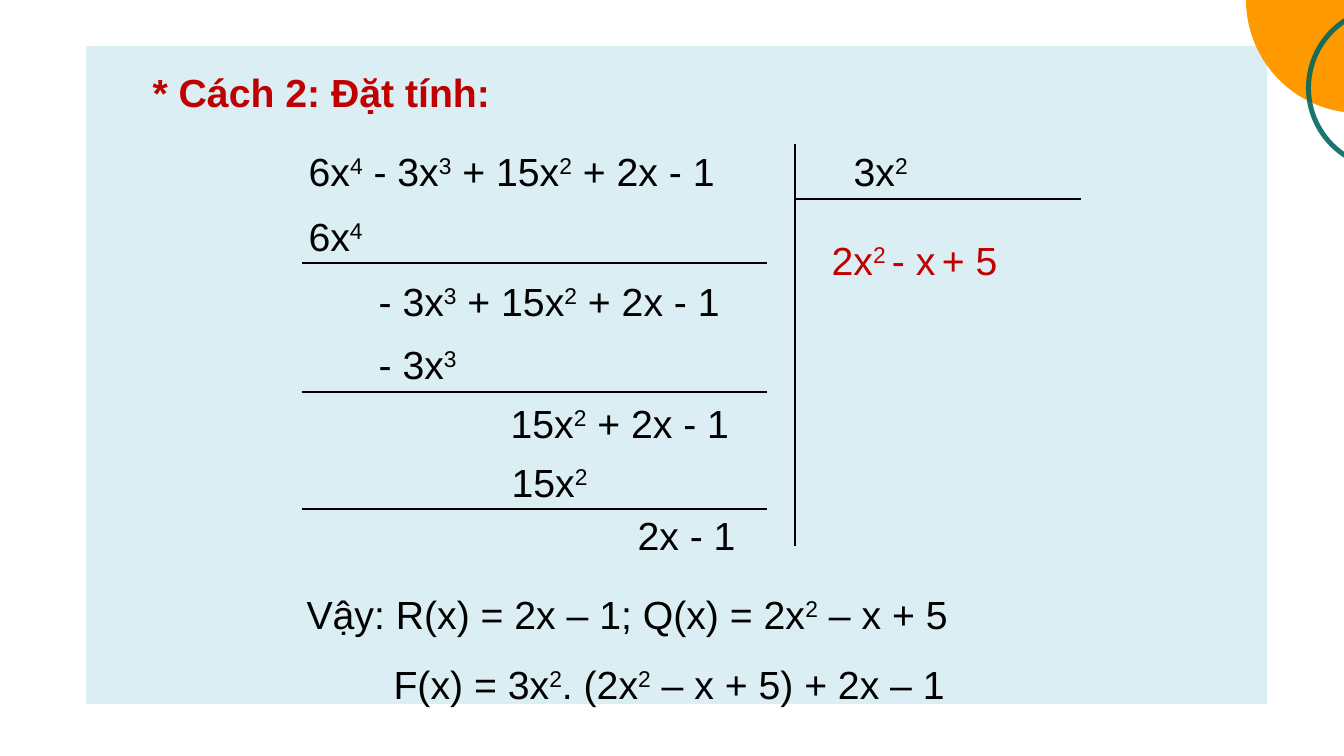
from pptx import Presentation
from pptx.dml.color import RGBColor
from pptx.enum.shapes import MSO_CONNECTOR, MSO_SHAPE as Shape
from pptx.enum.text import MSO_AUTO_SIZE, PP_ALIGN
from pptx.oxml.ns import qn
from pptx.util import Pt
from lxml.etree import SubElement

PX = 914400 / 67.2  # EMU in one px
BLACK = RGBColor(0, 0, 0)
RED = RGBColor(0xC0, 0, 0)
PALE_BLUE = RGBColor(0xDB, 0xEE, 0xF4)
ORANGE = RGBColor(0xFF, 0x99, 0)
TEAL = RGBColor(0x03, 0x66, 0x60)

PANEL = (87, 47, 1179, 656)
DISC = (1246, -114, 226, 227)
RING = (1306, 5, 166, 166)
LINE_HEIGHT = 54

# Every second part between bars is superscript
TITLE = ("* Cách 2: Đặt tính:", 146, 65, 354)
DIVISION = [  # text, left, top, width
    ("6x|4| - 3x|3| + 15x|2| + 2x - 1", 302, 144, 429),
    ("3x|2", 847, 144, 70),
    ("6x|4", 302, 209, 70),
    ("- 3x|3| + 15x|2| + 2x - 1", 372, 274, 362),
    ("- 3x|3", 372, 337, 106),
    ("15x|2| + 2x - 1", 504, 396, 236),
    ("15x|2", 505, 455, 92),
    ("2x - 1", 631, 508, 112),
]
QUOTIENT = ("2x|2 |- x| |+ 5", 825, 209, 185)
CONCLUSION = [  # text, left margin
    ("Vậy: R(x) = 2x – 1; Q(x) = 2x|2| – x + 5", 0),
    ("F(x) = 3x|2|. (2x|2| – x + 5) + 2x – 1", 87),
]
RULES = [(795, 144, 795, 546), (795, 199, 1081, 199)]
RULES += [(302, y, 767, y) for y in (263, 392, 509)]


def px(*lengths):
    return [round(length * PX) for length in lengths]


def add_figure(kind, place, color):
    figure = page.shapes.add_shape(kind, *px(*place))
    figure.shadow.inherit = False
    figure.fill.solid()
    figure.fill.fore_color.rgb = color
    figure.line.fill.background()
    return figure


def add_rule(*ends):
    rule = page.shapes.add_connector(MSO_CONNECTOR.STRAIGHT, *px(*ends))
    rule.line.color.rgb = BLACK
    rule.line.width = Pt(3)
    SubElement(rule._element.spPr, qn("a:effectLst"))


def add_box(left, top, width, height=LINE_HEIGHT, wrap=False):
    box = page.shapes.add_textbox(*px(left, top, width, height))
    box.text_frame.word_wrap = wrap
    box.text_frame.auto_size = MSO_AUTO_SIZE.SHAPE_TO_FIT_TEXT
    return box.text_frame


def write(para, text, color=BLACK, bold=False):
    para.font.name = "Arial"
    para.font.size = Pt(42)
    para.font.bold = bold
    para.font.color.rgb = color
    for index, part in enumerate(text.split("|")):
        span = para.add_run()
        span.text = part
        if index % 2:
            span.font._element.set("baseline", "30000")


def justify(para):
    para.alignment = PP_ALIGN.JUSTIFY
    para.line_spacing = 1.5


deck = Presentation()
deck.slide_width, deck.slide_height = px(1344, 756)
page = deck.slides.add_slide(deck.slide_layouts[6])

# Panel and corner circles
panel = add_figure(Shape.RECTANGLE, PANEL, PALE_BLUE)
panel.line.color.rgb = PALE_BLUE
panel.line.width = Pt(2)
add_figure(Shape.OVAL, DISC, ORANGE)
ring = add_figure(Shape.DONUT, RING, TEAL)
ring.adjustments[0] = 0.03
ring_color = ring._element.spPr.find(qn("a:solidFill"))[0]
SubElement(ring_color, qn("a:alpha")).set("val", "90000")

# Title
text, *place = TITLE
write(add_box(*place).paragraphs[0], text, RED, bold=True)

# Long division
for text, *place in DIVISION:
    write(add_box(*place).paragraphs[0], text)
for rule_ends in RULES:
    add_rule(*rule_ends)
text, *place = QUOTIENT
quotient = add_box(*place, height=69).paragraphs[0]
write(quotient, text, RED)
justify(quotient)
quotient.space_after = Pt(8)

# Conclusion
frame = add_box(300, 563, 792, 149, wrap=True)
for index, (text, margin) in enumerate(CONCLUSION):
    para = frame.add_paragraph() if index else frame.paragraphs[0]
    write(para, text)
    justify(para)
    para._p.get_or_add_pPr().set("marL", str(px(margin)[0]))

deck.save("out.pptx")
